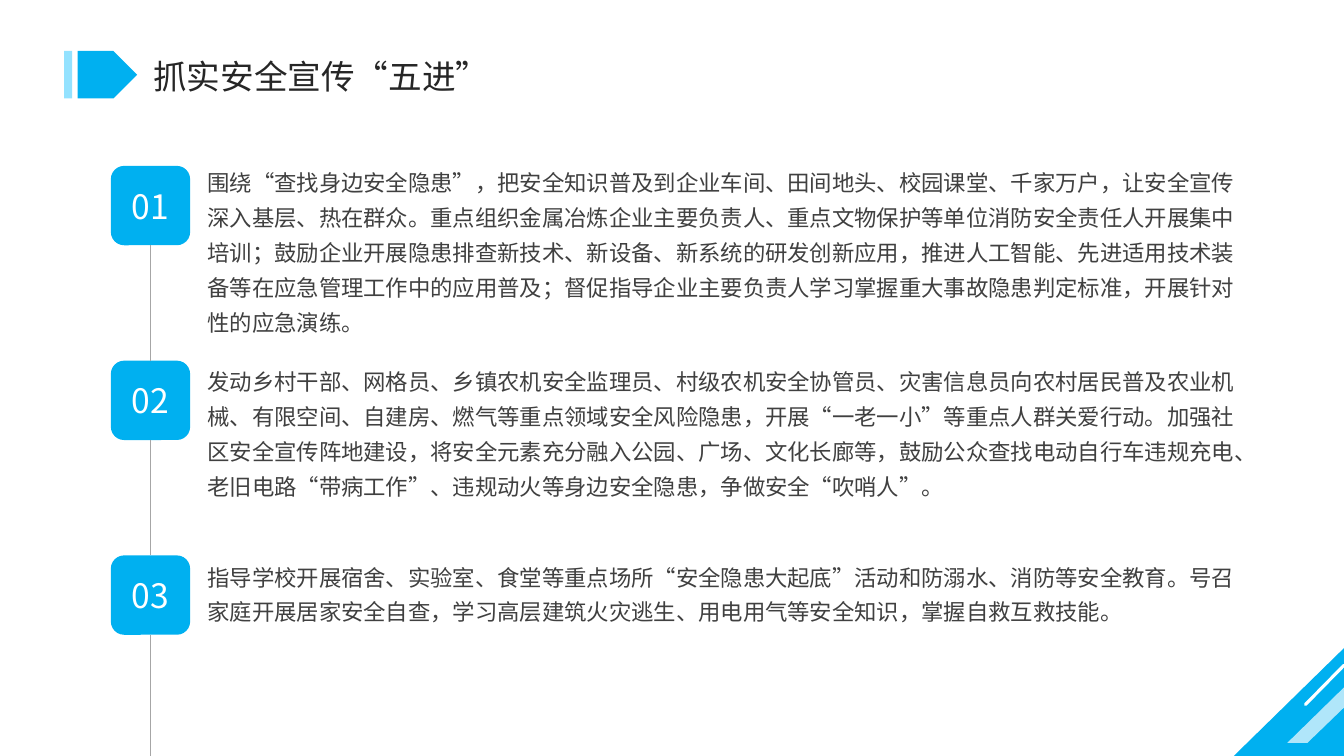
from dataclasses import dataclass

from lxml import etree
from pptx import Presentation
from pptx import util as u
from pptx.dml.color import RGBColor
from pptx.enum import lang, shapes, text
from pptx.oxml import ns

FONT = "Noto Sans CJK SC"
COLORS = {
    "blue": "00B0F0",
    "pale": "93E2FF",
    "white": "FFFFFF",
    "title": "262626",
    "body": "404040",
    "rail": "A6A6A6",
}
SLIDE_WIDTH, SLIDE_HEIGHT = u.Inches(13.333), u.Inches(7.5)
FIRST_ROW, ROW_PITCH = 21.95, 25.76  # percent of the slide height


@dataclass(frozen=True)
class Box:
    """A rectangle in percent of the slide's width and height."""

    left: float
    top: float
    width: float
    height: float

    def emu(self) -> tuple:
        return x(self.left), y(self.top), x(self.width), y(self.height)


@dataclass(frozen=True)
class Measure:
    number: str
    text_lift: float  # percent of the slide height above the badge's top
    body: str


MEASURES = [
    Measure("01", 1.28,
            "围绕“查找身边安全隐患”，把安全知识普及到企业车间、田间地头、校园课堂、千家万户，"
            "让安全宣传深入基层、热在群众。重点组织金属冶炼企业主要负责人、重点文物保护等单位"
            "消防安全责任人开展集中培训；鼓励企业开展隐患排查新技术、新设备、新系统的研发创新应用，"
            "推进人工智能、先进适用技术装备等在应急管理工作中的应用普及；"
            "督促指导企业主要负责人学习掌握重大事故隐患判定标准，开展针对性的应急演练。"),
    Measure("02", 0.73,
            "发动乡村干部、网格员、乡镇农机安全监理员、村级农机安全协管员、灾害信息员"
            "向农村居民普及农业机械、有限空间、自建房、燃气等重点领域安全风险隐患，"
            "开展“一老一小”等重点人群关爱行动。加强社区安全宣传阵地建设，"
            "将安全元素充分融入公园、广场、文化长廊等，鼓励公众查找电动自行车违规充电、"
            "老旧电路“带病工作”、违规动火等身边安全隐患，争做安全“吹哨人”。"),
    Measure("03", 0.63,
            "指导学校开展宿舍、实验室、食堂等重点场所“安全隐患大起底”活动和防溺水、"
            "消防等安全教育。号召家庭开展居家安全自查，学习高层建筑火灾逃生、"
            "用电用气等安全知识，掌握自救互救技能。"),
]


def x(percent: float) -> int:
    return round(SLIDE_WIDTH * percent / 100)


def y(percent: float) -> int:
    return round(SLIDE_HEIGHT * percent / 100)


def rgb(name: str) -> RGBColor:
    return RGBColor.from_string(COLORS[name])


def paint(shape, color: str):
    """Give a flat fill without outline or shadow."""
    shape.shadow.inherit = False
    shape.fill.solid()
    shape.fill.fore_color.rgb = rgb(color)
    shape.line.fill.background()
    return shape


def add_block(slide, kind, box: Box, color: str):
    return paint(slide.shapes.add_shape(kind, *box.emu()), color)


def add_line(slide, start: tuple, end: tuple, color: str, points: float):
    line = slide.shapes.add_connector(
        shapes.MSO_CONNECTOR.STRAIGHT, x(start[0]), y(start[1]), x(end[0]), y(end[1]))
    line.line.color.rgb = rgb(color)
    line.line.width = u.Pt(points)
    etree.SubElement(line.element.spPr, ns.qn("a:effectLst"))
    return line


def write(shape, wording: str, size: float, color: str, align, anchor, spacing: float = 1):
    frame = shape.text_frame
    frame.text = wording
    frame.word_wrap = True
    frame.auto_size = text.MSO_AUTO_SIZE.NONE
    frame.vertical_anchor = anchor
    paragraph = frame.paragraphs[0]
    paragraph.alignment = align
    paragraph.line_spacing = spacing
    for run in paragraph.runs:
        run.font.name = FONT
        run.font.size = u.Pt(size)
        run.font.color.rgb = rgb(color)
        run.font.language_id = lang.MSO_LANGUAGE_ID.SIMPLIFIED_CHINESE
        properties = run._r.get_or_add_rPr()
        etree.SubElement(properties, ns.qn("a:ea"), typeface=FONT)


def add_corner(slide) -> None:
    triangle = add_block(slide, shapes.MSO_SHAPE.ISOSCELES_TRIANGLE,
                         Box(91.8, 85.73, 8.2, 14.27), "blue")
    triangle.adjustments[0] = 1
    builder = slide.shapes.build_freeform(x(100), y(90.93), scale=1.0)
    builder.add_line_segments(
        [(x(100), y(93.6)), (x(97.28), y(98.27)), (x(95.78), y(98.27))], close=True)
    stripe = paint(builder.convert_to_shape(), "white")
    fill_color = stripe.element.spPr.find(".//" + ns.qn("a:srgbClr"))
    etree.SubElement(fill_color, ns.qn("a:alpha"), val="69000")
    glint = add_line(slide, (100, 88), (97.13, 93.2), "white", 2.25)
    glint.get_or_add_ln().set("cap", "rnd")


def add_heading(slide, wording: str) -> None:
    add_block(slide, shapes.MSO_SHAPE.PENTAGON, Box(5.78, 6.75, 4.42, 6.27), "blue")
    add_block(slide, shapes.MSO_SHAPE.RECTANGLE, Box(4.77, 6.75, 0.6, 6.27), "pale")
    title = slide.shapes.title
    title.left, title.top, title.width, title.height = Box(10.65, 6.67, 29, 6.67).emu()
    write(title, wording, 24, "title", text.PP_ALIGN.LEFT, text.MSO_ANCHOR.MIDDLE)


def add_measure(slide, row: int, measure: Measure):
    """Draw a numbered badge with its paragraph and return the badge."""
    top = FIRST_ROW + row * ROW_PITCH
    badge = add_block(slide, shapes.MSO_SHAPE.ROUNDED_RECTANGLE,
                      Box(8.25, top, 5.9, 10.5), "blue")
    write(badge, measure.number, 24, "white", text.PP_ALIGN.CENTER, text.MSO_ANCHOR.MIDDLE)
    body = slide.shapes.add_textbox(*Box(14.7, top - measure.text_lift, 78.1, 17.07).emu())
    write(body, measure.body, 16, "body", text.PP_ALIGN.LEFT, text.MSO_ANCHOR.TOP, 1.3)
    return badge


def add_rail(slide, badges: list) -> None:
    """Run a thin line from badge to badge and on to the slide's bottom edge."""
    for upper, lower in zip(badges, badges[1:] + [None]):
        rail = add_line(slide, (11.2, 90), (11.2, 100), "rail", 0.5)
        rail.begin_connect(upper, 2)
        if lower is None:
            rail.end_x = rail.begin_x
        else:
            rail.end_connect(lower, 0)


def main() -> None:
    presentation = Presentation()
    presentation.slide_width, presentation.slide_height = SLIDE_WIDTH, SLIDE_HEIGHT
    slide = presentation.slides.add_slide(presentation.slide_layouts.get_by_name("Title Only"))
    add_corner(slide)
    add_heading(slide, "抓实安全宣传“五进”")
    badges = [add_measure(slide, row, measure) for row, measure in enumerate(MEASURES)]
    add_rail(slide, badges)
    presentation.save("out.pptx")


if __name__ == "__main__":
    main()
